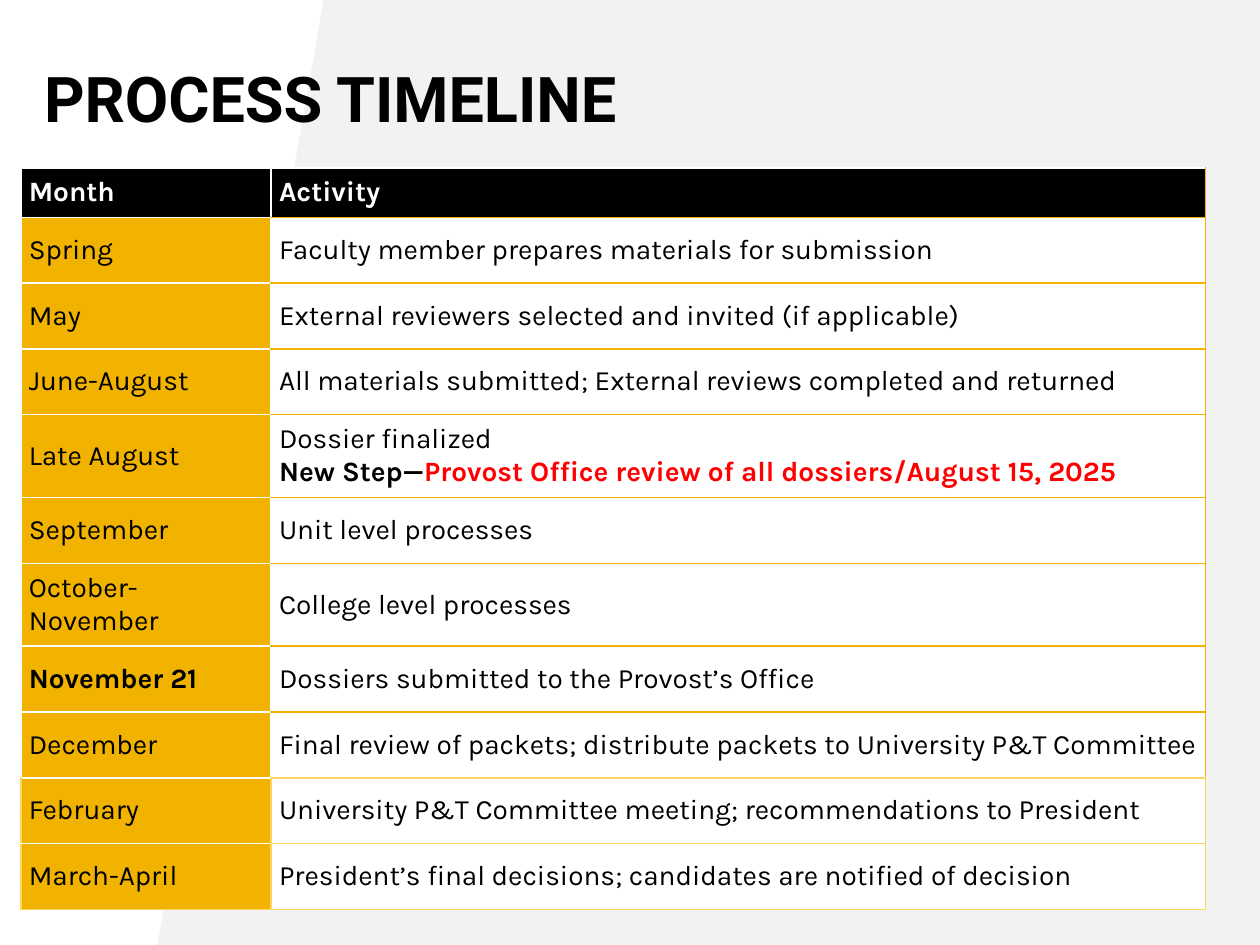
from lxml import etree
from pptx import Presentation
from pptx.dml.color import RGBColor
from pptx.enum.text import MSO_ANCHOR
from pptx.oxml.ns import qn
from pptx.util import Pt

MIDDLE = MSO_ANCHOR.MIDDLE
BLANK_LAYOUT = 6
COLORS = {
    "black": "000000",
    "white": "FFFFFF",
    "gray": "F2F2F2",
    "gold": "F1B300",
    "pale": "FFD55E",
    "red": "FF0000",
}
TIMELINE = [
    ("Spring", "Faculty member prepares materials for submission"),
    ("May", "External reviewers selected and invited (if applicable)"),
    ("June-August", "All materials submitted; External reviews completed and returned"),
    ("Late August", "Dossier finalized"),
    ("September", "Unit level processes"),
    ("October-November", "College level processes"),
    ("November 21", "Dossiers submitted to the Provost’s Office"),
    ("December", "Final review of packets; distribute packets to University P&T Committee"),
    ("February", "University P&T Committee meeting; recommendations to President"),
    ("March-April", "President’s final decisions; candidates are notified of decision"),
]
NEW_STEP = [
    ("New Step—", "black"),
    ("Provost Office review of all dossiers/August 15, 2025", "red"),
]
BOLD_MONTH = "November 21"
NEW_STEP_MONTH = "Late August"
FIRST_PALE_ROW = 9


def rgb(name):
    """Return the named colour."""
    return RGBColor.from_string(COLORS[name])


def add_run(paragraph, text, size, font_name, color, bold=False):
    """Add one formatted run to a paragraph."""
    run = paragraph.add_run()
    run.text = text
    run.font.size = Pt(size)
    run.font.name = font_name
    run.font.bold = bold
    run.font.color.rgb = rgb(color)


def add_background(slide, left, top, width, height):
    """Fill the slide gray and lay the slanted white panel over its left side."""
    slide.background.fill.solid()
    slide.background.fill.fore_color.rgb = rgb("gray")
    builder = slide.shapes.build_freeform(Pt(left), Pt(top))
    corners = [(width, 0), (width * 0.486, height), (0, height)]
    builder.add_line_segments([(Pt(left + x), Pt(top + y)) for x, y in corners])
    panel = builder.convert_to_shape()
    panel.shadow.inherit = False
    panel.fill.solid()
    panel.fill.fore_color.rgb = rgb("white")
    panel.line.fill.background()


def add_title(slide, left, top, width, height):
    """Place the slide title."""
    frame = slide.shapes.add_textbox(Pt(left), Pt(top), Pt(width), Pt(height)).text_frame
    frame.word_wrap = True
    frame.margin_left = frame.margin_right = frame.margin_top = frame.margin_bottom = 0
    paragraph = frame.paragraphs[0]
    paragraph.line_spacing = Pt(35.6)
    add_run(paragraph, "PROCESS TIMELINE", 36, "Roboto", "black", True)


def set_borders(cell, borders):
    """Draw one-point borders on the sides given as a dict of colour names."""
    properties = cell._tc.get_or_add_tcPr()
    for side in "LRTB":
        if side in borders:
            line = etree.SubElement(properties, qn(f"a:ln{side}"), w=str(Pt(1)))
            fill = etree.SubElement(line, qn("a:solidFill"))
            etree.SubElement(fill, qn("a:srgbClr"), val=COLORS[borders[side]])


def month_borders(row, last_row):
    """Return the border colours of a month cell."""
    borders = {"R": "white", "T": "white", "B": "white"}
    if row >= FIRST_PALE_ROW:
        borders.update(L="pale", R="pale")
    if row == last_row:
        borders["B"] = "pale"
    return borders


def activity_borders(row):
    """Return the border colours of an activity cell."""
    if row >= FIRST_PALE_ROW:
        return dict.fromkeys("LRTB", "pale")
    borders = {"L": "white", "R": "gold", "B": "gold"}
    borders["T"] = "gold" if row else "white"
    if row == FIRST_PALE_ROW - 1:
        borders["B"] = "pale"
    return borders


def fill_cell(cell, text, fill, color, bold, borders):
    """Format one table cell and write its first paragraph."""
    set_borders(cell, borders)
    cell.fill.solid()
    cell.fill.fore_color.rgb = rgb(fill)
    cell.vertical_anchor = MIDDLE
    cell.margin_left = cell.margin_right = Pt(4.5)
    cell.margin_top = cell.margin_bottom = Pt(4.5)
    add_run(cell.text_frame.paragraphs[0], text, 16, "Karla", color, bold)


def add_timeline(slide, left, top, width, height):
    """Place the table of months and activities."""
    rows = [("Month", "Activity")] + TIMELINE
    last_row = len(TIMELINE)
    header_height = 23
    month_width = 143
    table = slide.shapes.add_table(
        len(rows), 2, Pt(left), Pt(top), Pt(width), Pt(height)
    ).table
    table.columns[0].width = Pt(month_width)
    table.columns[1].width = Pt(width - month_width)
    for row, (month, activity) in enumerate(rows):
        header = row == 0
        table.rows[row].height = Pt(header_height if header else (height - header_height) / last_row)
        color = "white" if header else "black"
        fill_cell(table.cell(row, 0), month, "black" if header else "gold", color,
                  header or month == BOLD_MONTH, month_borders(row, last_row))
        activity_cell = table.cell(row, 1)
        fill_cell(activity_cell, activity, "black" if header else "white", color,
                  header, activity_borders(row))
        if month == NEW_STEP_MONTH:
            paragraph = activity_cell.text_frame.add_paragraph()
            for text, run_color in NEW_STEP:
                add_run(paragraph, text, 16, "Karla", run_color, True)


def main():
    """Build the process timeline slide."""
    presentation = Presentation()
    presentation.slide_width = Pt(720)
    presentation.slide_height = Pt(540)
    slide = presentation.slides.add_slide(presentation.slide_layouts[BLANK_LAYOUT])
    add_background(slide, 0, 0, 185, 540)
    add_title(slide, 25.2, 41.8, 621.4, 36)
    add_timeline(slide, 12, 96, 676.8, 399)
    presentation.save("out.pptx")


if __name__ == "__main__":
    main()
